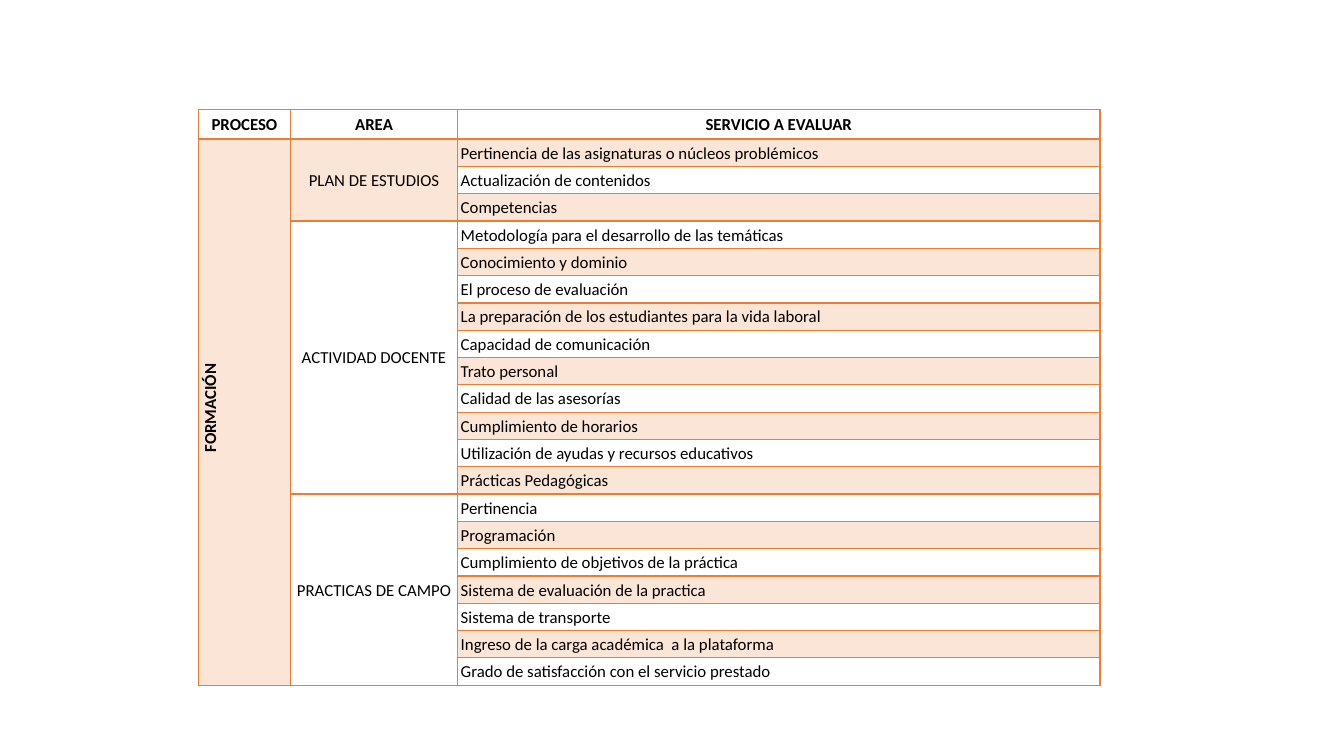
from pptx import Presentation
from pptx.dml.color import RGBColor
from pptx.enum.text import MSO_ANCHOR, PP_ALIGN
from pptx.oxml import parse_xml
from pptx.oxml.ns import nsdecls
from pptx.util import Inches, Pt

ORANGE = RGBColor(0xED, 0x7D, 0x31)
PEACH = RGBColor(0xFB, 0xE5, 0xD6)
BLACK = RGBColor(0x00, 0x00, 0x00)

HEADERS = ["PROCESO", "AREA", "SERVICIO A EVALUAR"]
PROCESS = "FORMACIÓN"
AREAS = {
    "PLAN DE ESTUDIOS": [
        "Pertinencia de las asignaturas o núcleos problémicos",
        "Actualización de contenidos",
        "Competencias",
    ],
    "ACTIVIDAD DOCENTE": [
        "Metodología para el desarrollo de las temáticas",
        "Conocimiento y dominio",
        "El proceso de evaluación",
        "La preparación de los estudiantes para la vida laboral",
        "Capacidad de comunicación",
        "Trato personal",
        "Calidad de las asesorías",
        "Cumplimiento de horarios",
        "Utilización de ayudas y recursos educativos",
        "Prácticas Pedagógicas",
    ],
    "PRACTICAS DE CAMPO": [
        "Pertinencia",
        "Programación",
        "Cumplimiento de objetivos de la práctica",
        "Sistema de evaluación de la practica",
        "Sistema de transporte",
        "Ingreso de la carga académica  a la plataforma",
        "Grado de satisfacción con el servicio prestado",
    ],
}
COLUMN_WIDTHS = [0.91, 1.66, 6.37]
HEADER_HEIGHT = 0.29
TABLE_HEIGHT = 5.71


class SlideBuilder:
    font_name = "Calibri"
    font_size = Pt(12)

    def __init__(self, page):
        self.page = page

    def table(self, left, top, widths, heights):
        frame = self.page.shapes.add_table(
            len(heights), len(widths), Inches(left), Inches(top),
            Inches(sum(widths)), Inches(sum(heights)))
        table = frame.table
        table.first_row = False
        table.horz_banding = False
        for column, width in zip(table.columns, widths):
            column.width = Inches(width)
        for row, height in zip(table.rows, heights):
            row.height = Inches(height)
        return table

    def cell_frame(self, cell, shaded, bottom=1):
        """Set margins, orange borders (widths in points) and the fill."""
        cell.margin_left = cell.margin_right = Inches(0.03)
        cell.margin_top = cell.margin_bottom = 0
        cell.vertical_anchor = MSO_ANCHOR.MIDDLE
        properties = cell._tc.get_or_add_tcPr()
        for side, width in zip("LRTB", (1, 1, 1, bottom)):
            properties.append(parse_xml(
                f'<a:ln{side} {nsdecls("a")} w="{Pt(width)}"><a:solidFill>'
                f'<a:srgbClr val="{ORANGE}"/></a:solidFill></a:ln{side}>'))
        if shaded:
            cell.fill.solid()
            cell.fill.fore_color.rgb = PEACH
        else:
            cell.fill.background()

    def cell_text(self, cell, text, align=PP_ALIGN.CENTER, bold=False):
        para = cell.text_frame.paragraphs[0]
        para.text = text
        para.alignment = align
        para.line_spacing = 1.07
        font = para.runs[0].font
        font.name = self.font_name
        font.size = self.font_size
        font.bold = bold
        font.color.rgb = BLACK

    def vertical_text(self, cell, text):
        self.cell_text(cell, text, bold=True)
        cell._tc.get_or_add_tcPr().set("vert", "vert270")
        indent = cell.text_frame.paragraphs[0]._p.get_or_add_pPr()
        indent.set("marL", str(Inches(0.08)))


def main():
    deck = Presentation()
    deck.slide_width, deck.slide_height = Inches(13.33), Inches(7.5)
    builder = SlideBuilder(deck.slides.add_slide(deck.slide_layouts[6]))

    count = sum(len(services) for services in AREAS.values())
    row_height = (TABLE_HEIGHT - HEADER_HEIGHT) / count
    table = builder.table(1.97, 1.09, COLUMN_WIDTHS,
                          [HEADER_HEIGHT] + [row_height] * count)

    for column, header in enumerate(HEADERS):
        cell = table.cell(0, column)
        builder.cell_frame(cell, shaded=False, bottom=2)
        builder.cell_text(cell, header, bold=True)

    row = 1
    for area, services in AREAS.items():
        first = row
        for service in services:
            builder.cell_frame(table.cell(row, 0), shaded=True)
            builder.cell_frame(table.cell(row, 1), shaded=first == 1)
            builder.cell_frame(table.cell(row, 2), shaded=row % 2 == 1)
            builder.cell_text(table.cell(row, 2), service, PP_ALIGN.LEFT)
            row += 1
        table.cell(first, 1).merge(table.cell(row - 1, 1))
        builder.cell_text(table.cell(first, 1), area)

    table.cell(1, 0).merge(table.cell(count, 0))
    builder.vertical_text(table.cell(1, 0), PROCESS)
    deck.save("out.pptx")


if __name__ == "__main__":
    main()
